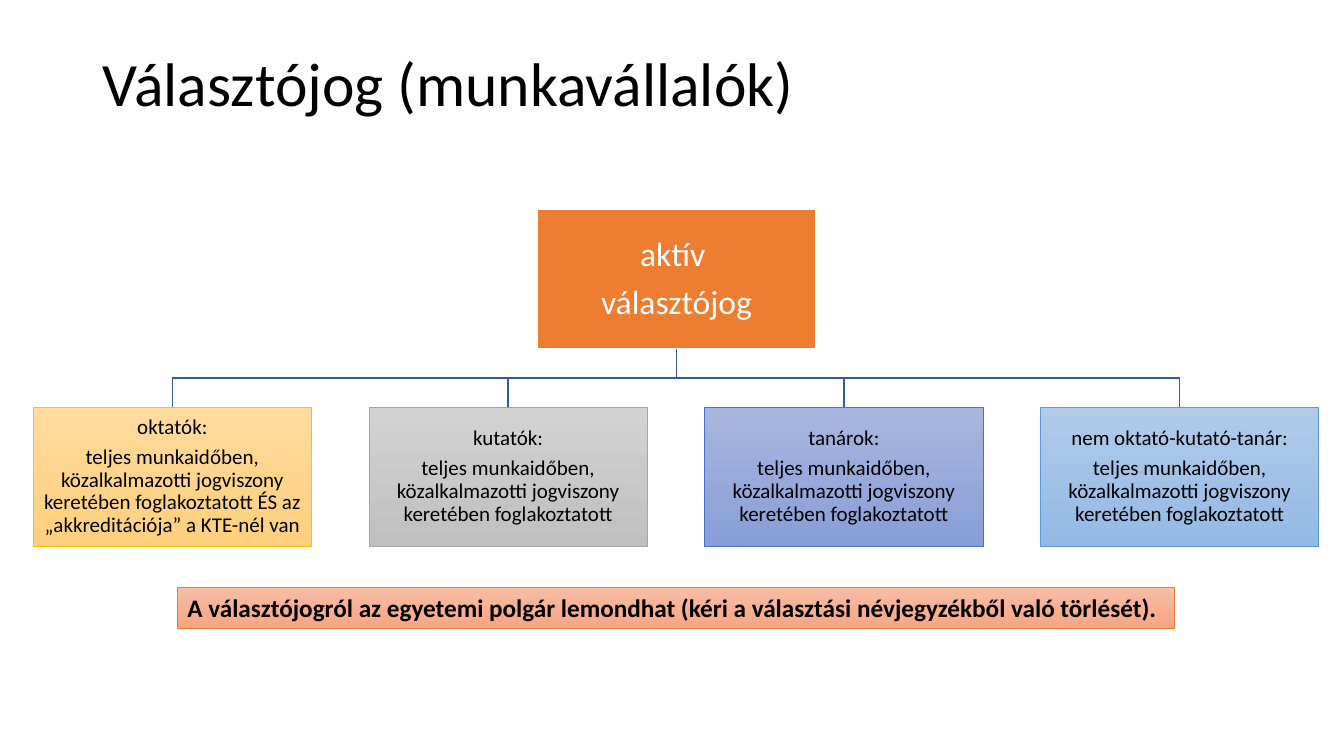
from pptx import Presentation
from pptx.dml.color import RGBColor
from pptx.enum.shapes import MSO_SHAPE
from pptx.enum.text import MSO_ANCHOR, PP_ALIGN
from pptx.util import Inches, Pt

TITLE = "Választójog (munkavállalók)"
ROOT = ["aktív ", "választójog"]
TERMS = "teljes munkaidőben, közalkalmazotti jogviszony keretében foglakoztatott"
GROUPS = [
    ("oktatók:", TERMS + " ÉS az „akkreditációja” a KTE-nél van", "gold"),
    ("kutatók:", TERMS, "gray"),
    ("tanárok:", TERMS, "blue"),
    ("nem oktató-kutató-tanár:", TERMS, "sky"),
]
NOTICE = ("A választójogról az egyetemi polgár lemondhat "
          "(kéri a választási névjegyzékből való törlését).")

THEME = {
    "font": "Calibri",
    "sizes": {"title": 44, "root": 24, "group": 15, "notice": 18},
    "text": "000000",
    "white": "FFFFFF",
    "branch": "365B9D",
    "fills": {
        "root": (["ED7D31"], "FFFFFF", 1),
        "gold": (["FFDB9E", "FFD07C"], "FFC000", 0.5),
        "gray": (["D2D2D2", "C0C0C0"], "A5A5A5", 0.5),
        "blue": (["A8B7DF", "889ED7"], "4472C4", 0.5),
        "sky": (["B1CBE9", "93B9E4"], "5B9BD5", 0.5),
        "notice": (["F7BDA5", "F8A582"], "ED7D31", 0.5),
    },
}

BOX_W, BOX_H = 2.76, 1.38
ROOT_LEFT, ROOT_TOP = 5.33, 2.08
GROUP_LEFT, GROUP_TOP, GROUP_PITCH = 0.33, 4.04, 3.33


def color(code):
    return RGBColor.from_string(code)


def write(frame, paragraphs, role, ink=THEME["text"], align=PP_ALIGN.CENTER,
          spacing=0.9, after=0.35, inset=None, bold=False, wrap=True):
    size = THEME["sizes"][role]
    frame.word_wrap = wrap
    frame.vertical_anchor = MSO_ANCHOR.MIDDLE
    if inset is not None:
        frame.margin_left = frame.margin_right = Inches(inset)
        frame.margin_top = frame.margin_bottom = Inches(inset)
    for index, words in enumerate(paragraphs):
        paragraph = frame.add_paragraph() if index else frame.paragraphs[0]
        paragraph.alignment = align
        paragraph.line_spacing = spacing
        paragraph.space_after = Pt(size * after)
        run = paragraph.add_run()
        run.text = words
        run.font.name = THEME["font"]
        run.font.size = Pt(size)
        run.font.bold = bold
        run.font.color.rgb = color(ink)


def add_box(slide, left, top, width, height, style):
    stops, outline, weight = THEME["fills"][style]
    box = slide.shapes.add_shape(MSO_SHAPE.RECTANGLE, Inches(left), Inches(top),
                                 Inches(width), Inches(height))
    box.shadow.inherit = False
    if len(stops) == 1:
        box.fill.solid()
        box.fill.fore_color.rgb = color(stops[0])
    else:
        box.fill.gradient()
        box.fill.gradient_angle = 270
        for stop, code in zip(box.fill.gradient_stops, stops):
            stop.color.rgb = color(code)
    box.line.color.rgb = color(outline)
    box.line.width = Pt(weight)
    return box.text_frame


def add_branch(slide, group_center):
    root_center, root_bottom = ROOT_LEFT + BOX_W / 2, ROOT_TOP + BOX_H
    middle = (root_bottom + GROUP_TOP) / 2
    corners = [(root_center, middle), (group_center, middle), (group_center, GROUP_TOP)]
    builder = slide.shapes.build_freeform(Inches(root_center), Inches(root_bottom))
    builder.add_line_segments([(Inches(x), Inches(y)) for x, y in corners], close=False)
    branch = builder.convert_to_shape()
    branch.shadow.inherit = False
    branch.fill.background()
    branch.line.color.rgb = color(THEME["branch"])
    branch.line.width = Pt(1)


def main():
    deck = Presentation()
    deck.slide_width, deck.slide_height = Inches(13.33), Inches(7.5)
    slide = deck.slides.add_slide(deck.slide_layouts[6])

    title = slide.shapes.add_textbox(Inches(0.92), Inches(0.4), Inches(11.5), Inches(0.91))
    write(title.text_frame, [TITLE], "title", align=PP_ALIGN.LEFT, after=0)

    group_lefts = [GROUP_LEFT + GROUP_PITCH * i for i in range(len(GROUPS))]
    for left in group_lefts:
        add_branch(slide, left + BOX_W / 2)

    root = add_box(slide, ROOT_LEFT, ROOT_TOP, BOX_W, BOX_H, "root")
    write(root, ROOT, "root", ink=THEME["white"], inset=0.02)

    for left, (heading, terms, style) in zip(group_lefts, GROUPS):
        group = add_box(slide, left, GROUP_TOP, BOX_W, BOX_H, style)
        write(group, [heading, terms], "group", inset=0.01)

    notice = add_box(slide, 1.76, 5.83, 9.89, 0.4, "notice")
    write(notice, [NOTICE], "notice", align=PP_ALIGN.LEFT, spacing=1, after=0,
          bold=True)

    deck.save("out.pptx")


if __name__ == "__main__":
    main()
